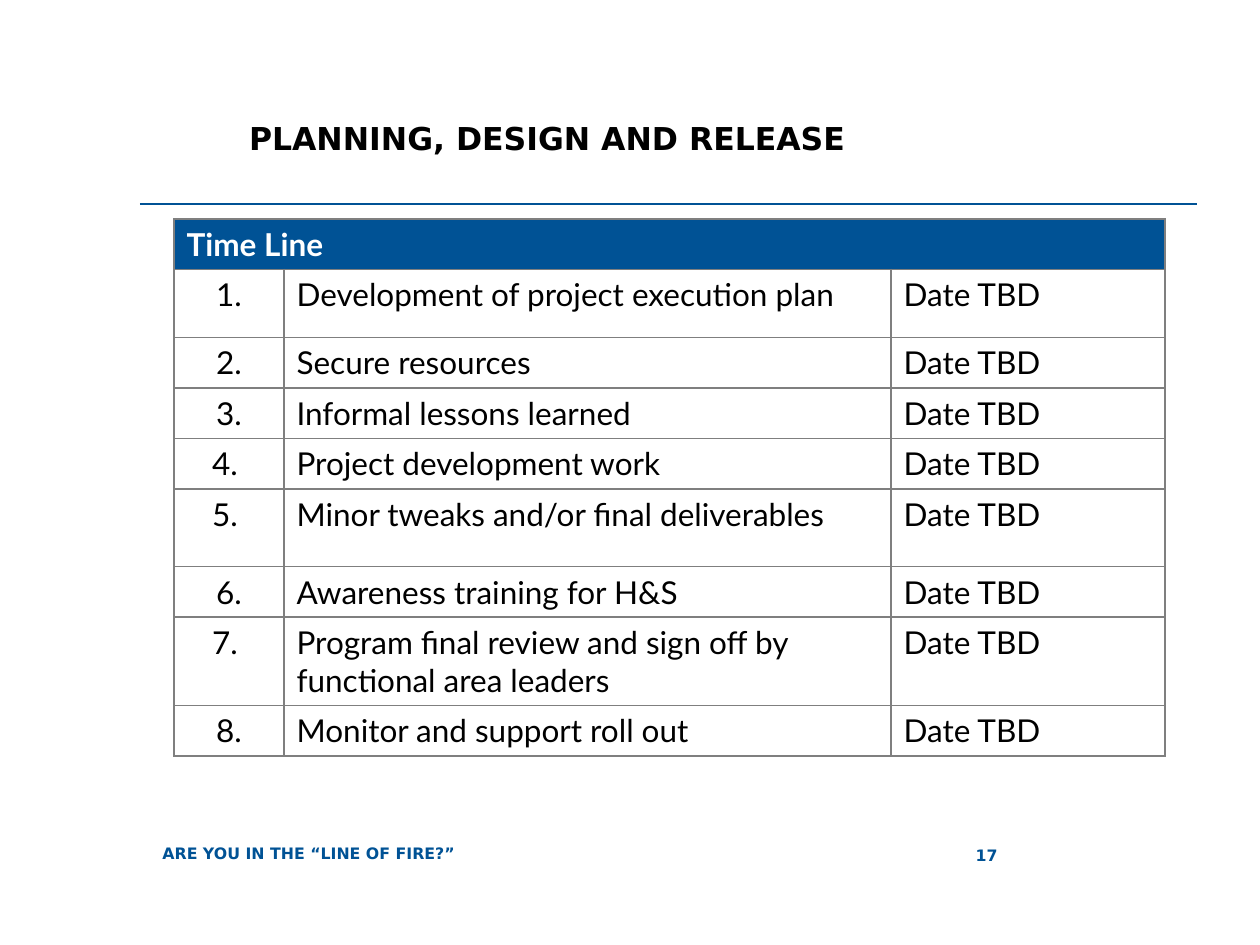
"""Build the planning, design and release timeline slide."""
from dataclasses import dataclass

from lxml import etree
from pptx import Presentation
from pptx.dml.color import RGBColor
from pptx.enum.shapes import MSO_CONNECTOR
from pptx.enum.text import MSO_ANCHOR, MSO_AUTO_SIZE, PP_ALIGN
from pptx.oxml.ns import qn
from pptx.util import Emu, Pt

LEFT, CENTER, RIGHT = PP_ALIGN.LEFT, PP_ALIGN.CENTER, PP_ALIGN.RIGHT
TOP, MIDDLE = MSO_ANCHOR.TOP, MSO_ANCHOR.MIDDLE
STRAIGHT = MSO_CONNECTOR.STRAIGHT
NO_FIT = MSO_AUTO_SIZE.NONE
SCALE = 914400 / 126


@dataclass(frozen=True)
class Theme:
    blue: str = "005295"
    black: str = "000000"
    white: str = "FFFFFF"
    gray: str = "7F7F7F"
    head: str = "DejaVu Sans"
    body: str = "Lato"
    large: int = 18
    small: int = 9
    rule: int = 1


theme = Theme()


def px(*sizes):
    return [Emu(round(size * SCALE)) for size in sizes]


def write(frame, text, font, size, color, bold, align=LEFT):
    line = frame.paragraphs[0]
    line.alignment = align
    run = line.add_run()
    run.text = text
    run.font.name = font
    run.font.size = Pt(size)
    run.font.bold = bold
    run.font.color.rgb = RGBColor.from_string(color)


deck = Presentation()
deck.slide_width, deck.slide_height = px(1260, 945)
slide = deck.slides.add_slide(deck.slide_layouts[5])
shapes = slide.shapes

rule = shapes.add_connector(STRAIGHT, *px(140, 204, 1197, 204))
rule.line.color.rgb = RGBColor.from_string(theme.blue)
rule.line.width = Pt(theme.rule)
etree.SubElement(rule._element.spPr, qn("a:effectLst"))

title = shapes.title
title.left, title.top, title.width, title.height = px(249, 113, 950, 101)
frame = title.text_frame
frame.margin_left = 0
frame.vertical_anchor = TOP
frame.auto_size = NO_FIT
frame.word_wrap = True
write(frame, "PLANNING, DESIGN AND RELEASE", theme.head, theme.large, theme.black, True)

footers = [
    ("ARE YOU IN THE “LINE OF FIRE?”", (150, 830, 698, 47), LEFT),
    ("17", (883, 830, 127, 50), RIGHT),
]
for text, box, align in footers:
    frame = shapes.add_textbox(*px(*box)).text_frame
    frame.word_wrap = True
    frame.vertical_anchor = MIDDLE
    write(frame, text, theme.head, theme.small, theme.blue, True, align)

tasks = [
    ("1.", "Development of project execution plan"),
    ("2.", "Secure resources"),
    ("3.", "Informal lessons learned"),
    ("4. ", "Project development work"),
    ("5. ", "Minor tweaks and/or final deliverables"),
    ("6.", "Awareness training for H&S"),
    ("7. ", "Program final review and sign off by functional area leaders"),
    ("8.", "Monitor and support roll out"),
]
widths = [110, 607, 274]
heights = [50, 68, 50, 50, 50, 78, 50, 88, 50]
place = px(174, 219, sum(widths), sum(heights))
table = shapes.add_table(len(heights), len(widths), *place).table
for col, width in zip(table.columns, px(*widths)):
    col.width = width
for row, height in zip(table.rows, px(*heights)):
    row.height = height

for cell in table.iter_cells():
    props = cell._tc.get_or_add_tcPr()
    for side in ("a:lnL", "a:lnR", "a:lnT", "a:lnB"):
        edge = etree.SubElement(props, qn(side), w=str(Pt(theme.rule)))
        paint = etree.SubElement(edge, qn("a:solidFill"))
        etree.SubElement(paint, qn("a:srgbClr"), val=theme.gray)
    cell.fill.background()

head = table.cell(0, 0)
head.merge(table.cell(0, len(widths) - 1))
head.fill.solid()
head.fill.fore_color.rgb = RGBColor.from_string(theme.blue)
head.vertical_anchor = MIDDLE
write(head.text_frame, "Time Line", theme.body, theme.large, theme.white, True)

for row, (mark, task) in enumerate(tasks, 1):
    for col, text in enumerate((mark, task, "Date TBD")):
        align = LEFT if col else CENTER
        frame = table.cell(row, col).text_frame
        write(frame, text, theme.body, theme.large, theme.black, False, align)

deck.save("out.pptx")
